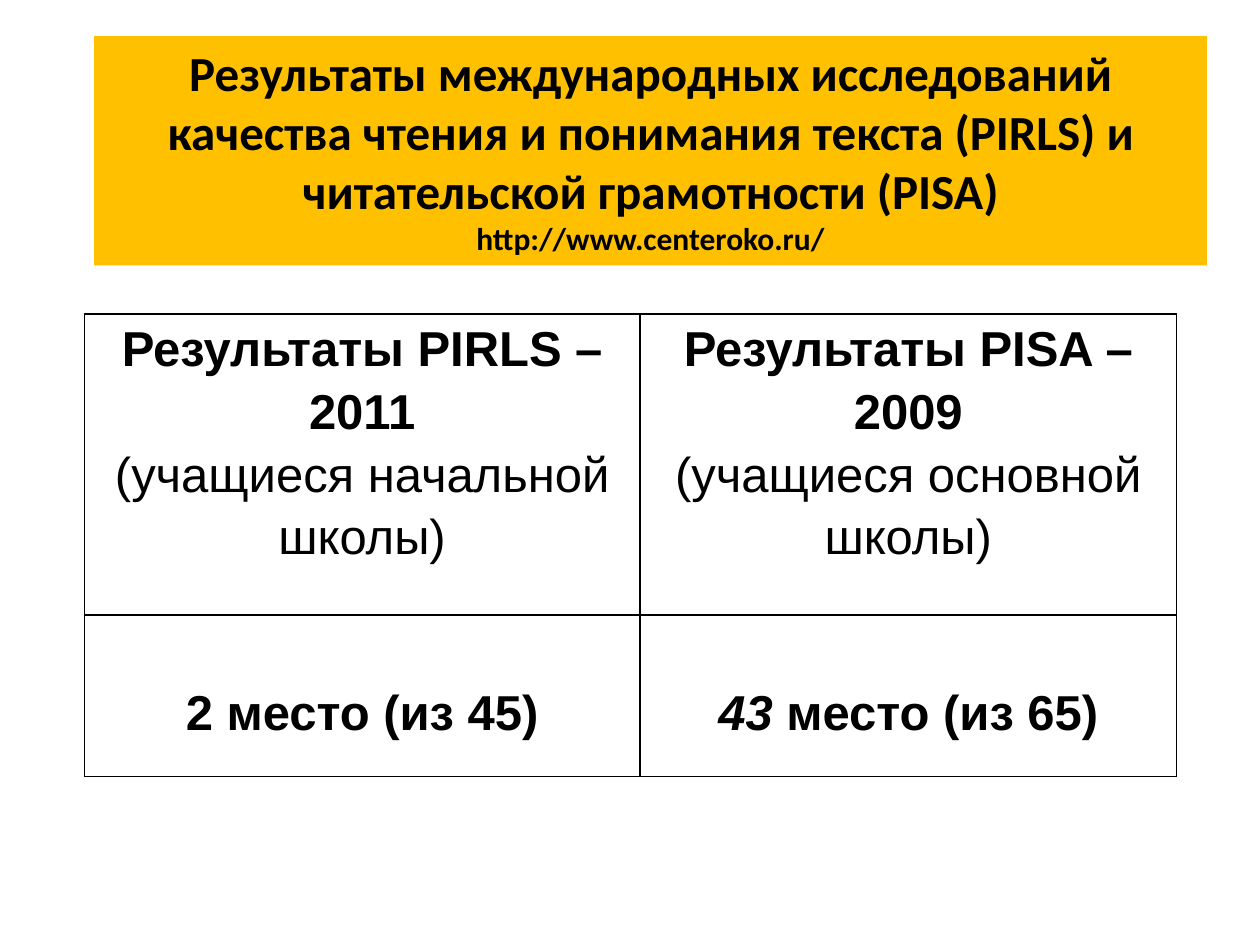
import pptx
import pptx.dml.color
import pptx.enum.shapes
import pptx.enum.text
import pptx.oxml
import pptx.oxml.ns
import pptx.util

Cm = pptx.util.Cm
Pt = pptx.util.Pt


def paint(color, code):
    color.rgb = pptx.dml.color.RGBColor.from_string(code)


def add_run(para, text, font, size=28, bold=True, slant=False):
    run = para.add_run()
    run.text = text
    run.font.name = font
    run.font.size = Pt(size)
    run.font.bold = bold
    run.font.italic = slant
    paint(run.font.color, "000000")


def add_para(frame, first, space=1.0):
    para = frame.paragraphs[0] if first else frame.add_paragraph()
    para.alignment = pptx.enum.text.PP_ALIGN.CENTER
    para.line_spacing = space
    return para


def add_title(slide, lines):
    box = slide.shapes.add_shape(
        pptx.enum.shapes.MSO_SHAPE.RECTANGLE,
        Cm(1.9), Cm(0.73), Cm(22.43), Cm(4.62))
    box.shadow.inherit = False
    box.fill.solid()
    paint(box.fill.fore_color, "FFC000")
    box.line.fill.background()
    frame = box.text_frame
    frame.word_wrap = True
    frame.vertical_anchor = pptx.enum.text.MSO_ANCHOR.TOP
    for index, (text, size) in enumerate(lines):
        add_run(add_para(frame, index == 0), text, "Calibri", size)


def add_edges(cell):
    props = cell._tc.get_or_add_tcPr()
    space = pptx.oxml.ns.nsdecls("a")
    for index, side in enumerate("LRTB"):
        edge = pptx.oxml.parse_xml(
            f'<a:ln{side} {space} w="12700"><a:solidFill>'
            f'<a:srgbClr val="000000"/></a:solidFill></a:ln{side}>')
        props.insert(index, edge)


def fill_cell(cell, paras, top):
    cell.fill.background()
    add_edges(cell)
    cell.margin_left = cell.margin_right = Cm(0.18)
    cell.margin_top = Cm(top)
    cell.margin_bottom = 0
    for index, runs in enumerate(paras):
        para = add_para(cell.text_frame, index == 0, 1.15)
        for text, bold, slant in runs:
            add_run(para, text, "Arial", bold=bold, slant=slant)


def add_table(slide, rows, widths, heights, tops):
    table = slide.shapes.add_table(
        len(rows), len(widths), Cm(1.7), Cm(6.33),
        Cm(sum(widths)), Cm(sum(heights))).table
    table.first_row = table.horz_banding = False
    for col, width in zip(table.columns, widths):
        col.width = Cm(width)
    for index, row in enumerate(rows):
        table.rows[index].height = Cm(heights[index])
        for cell, paras in zip(table.rows[index].cells, row):
            fill_cell(cell, paras, tops[index])


def main():
    deck = pptx.Presentation()
    deck.slide_width, deck.slide_height = Cm(25.4), Cm(19.05)
    slide = deck.slides.add_slide(deck.slide_layouts[6])
    rows = [
        [[[("Результаты PIRLS – 2011", True, False)],
          [("(учащиеся начальной школы)", False, False)]],
         [[("Результаты PISA – 2009", True, False)],
          [("(учащиеся основной школы)", False, False)]]],
        [[[("2 место (из 45)", True, False)]],
         [[("43 ", True, True), ("место (из 65)", True, False)]]],
    ]
    add_table(slide, rows, (11.2, 10.82), (6.07, 3.25), (0, 1.26))
    add_title(slide, [
        ("Результаты международных исследований качества чтения и понимания "
         "текста (PIRLS) и читательской грамотности (PISA)", 28),
        ("http://www.centeroko.ru/", 18),
    ])
    deck.save("out.pptx")


if __name__ == "__main__":
    main()
